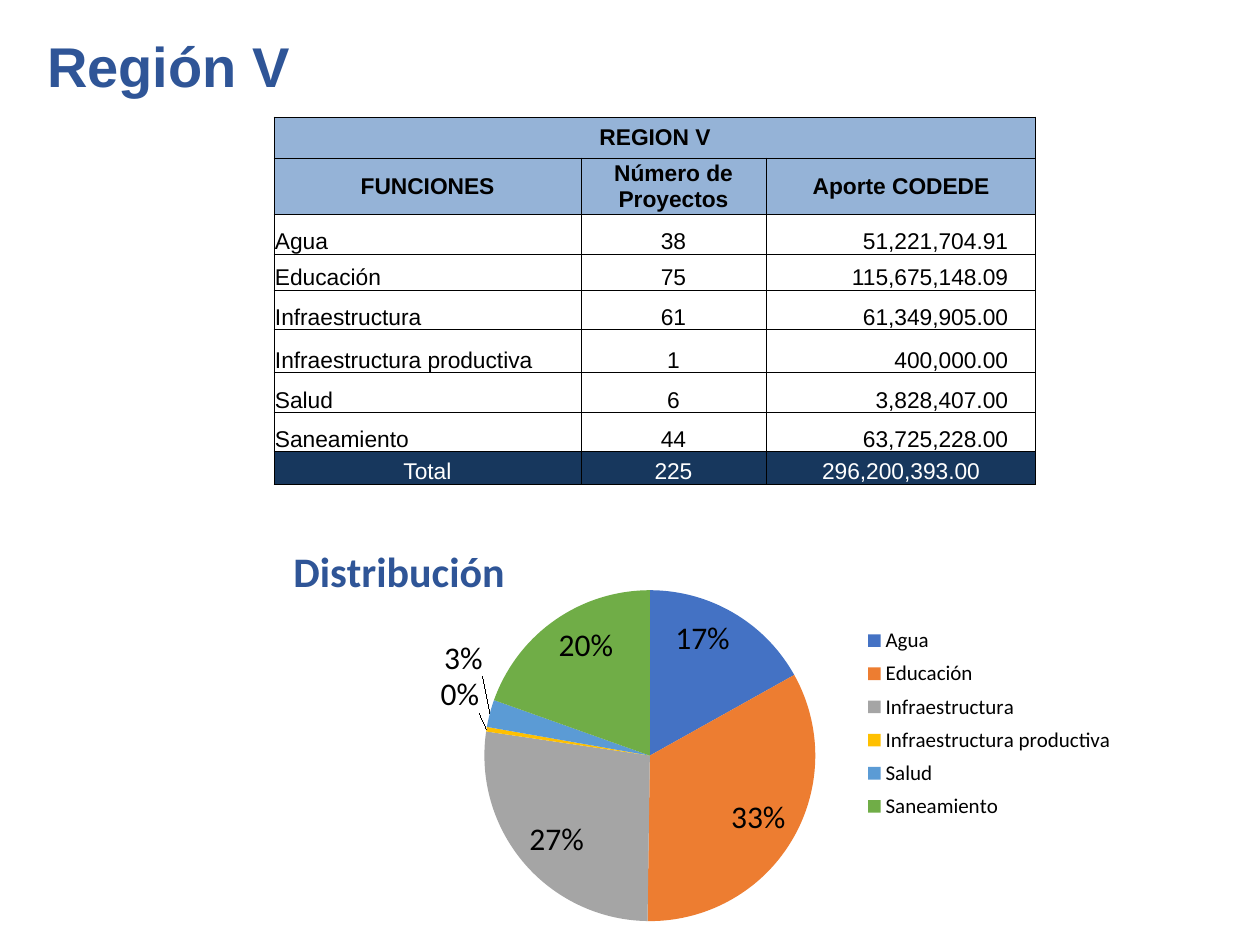
from lxml import etree
from pptx import Presentation
from pptx.chart.data import CategoryChartData
from pptx.dml.color import RGBColor
from pptx.enum.chart import XL_CHART_TYPE as ChartType
from pptx.enum.chart import XL_LABEL_POSITION as LabelPosition
from pptx.enum.chart import XL_LEGEND_POSITION as LegendPosition
from pptx.enum.text import MSO_ANCHOR as Anchor
from pptx.enum.text import PP_ALIGN as Align
from pptx.oxml import parse_xml
from pptx.oxml.ns import nsdecls, qn
from pptx.util import Emu, Pt

COLORS = {
    "blue": "2F5597", "black": "000000", "white": "FFFFFF",
    "header": "95B3D7", "total": "17375D",
}
SLICES = ["4472C4", "ED7D31", "A5A5A5", "FFC000", "5B9BD5", "70AD47"]
ROWS = [
    ("Agua", 38, "51,221,704.91"),
    ("Educación", 75, "115,675,148.09"),
    ("Infraestructura", 61, "61,349,905.00"),
    ("Infraestructura productiva", 1, "400,000.00"),
    ("Salud", 6, "3,828,407.00"),
    ("Saneamiento", 44, "63,725,228.00"),
]
COLUMN_WIDTHS = [307, 185, 270]
ROW_HEIGHTS = [41, 56, 40, 36, 40, 43, 40, 39, 33]


def px(length):
    return Emu(round(length * 914400 / 126))


def style_font(font, size, color, name, bold=False):
    font.size, font.name, font.bold = Pt(size), name, bold
    font.color.rgb = RGBColor.from_string(color)


def add_span(para, text, *style):
    span = para.add_run()
    span.text = text
    style_font(span.font, *style)


def add_title(page, left, top, width, height):
    box = page.shapes.add_textbox(px(left), px(top), px(width), px(height))
    box.text_frame.word_wrap = True
    para = box.text_frame.paragraphs[0]
    para.alignment = Align.CENTER
    add_span(para, "Región V", 32, COLORS["blue"], "Arial", True)


def add_borders(cell):
    properties = cell._tc.get_or_add_tcPr()
    for side in "LRTB":
        properties.append(parse_xml(
            f'<a:ln{side} {nsdecls("a")} w="6350"><a:solidFill>'
            f'<a:srgbClr val="{COLORS["black"]}"/></a:solidFill></a:ln{side}>'))


def fill_cell(cell, text, align, fill=None, color="black", bold=False,
              anchor=Anchor.BOTTOM, right=1):
    add_borders(cell)
    if fill:
        cell.fill.solid()
        cell.fill.fore_color.rgb = RGBColor.from_string(COLORS[fill])
    else:
        cell.fill.background()
    cell.margin_left, cell.margin_right = px(1), px(right)
    cell.margin_top, cell.margin_bottom = px(1), px(0)
    cell.vertical_anchor = anchor
    para = cell.text_frame.paragraphs[0]
    para.alignment = align
    if text:
        add_span(para, text, 13, COLORS[color], "Arial", bold)


def add_project_table(page, left, top):
    frame = page.shapes.add_table(
        len(ROW_HEIGHTS), len(COLUMN_WIDTHS), px(left), px(top),
        px(sum(COLUMN_WIDTHS)), px(sum(ROW_HEIGHTS)))
    table = frame.table
    table.first_row = table.horz_banding = False
    for column, width in zip(table.columns, COLUMN_WIDTHS):
        column.width = px(width)
    for row, height in zip(table.rows, ROW_HEIGHTS):
        row.height = px(height)

    # Two header rows, the first one merged
    headers = [("REGION V", "", ""),
               ("FUNCIONES", "Número de Proyectos", "Aporte CODEDE")]
    for r, texts in enumerate(headers):
        for c, text in enumerate(texts):
            fill_cell(table.cell(r, c), text, Align.CENTER, "header",
                      bold=True, anchor=Anchor.MIDDLE)
    table.cell(0, 0).merge(table.cell(0, 2))

    # One row for each function
    for r, (name, count, amount) in enumerate(ROWS, len(headers)):
        fill_cell(table.cell(r, 0), name, Align.LEFT)
        fill_cell(table.cell(r, 1), str(count), Align.CENTER)
        fill_cell(table.cell(r, 2), amount, Align.RIGHT, right=28)

    # Total row
    total = str(sum(count for _, count, _ in ROWS))
    for c, text in enumerate(["Total", total, "296,200,393.00"]):
        fill_cell(table.cell(len(ROW_HEIGHTS) - 1, c), text, Align.CENTER,
                  "total", "white")


def set_layout(parent, after, **values):
    """Give a chart part a manual layout, placed after the named child."""
    for old in parent.findall(qn("c:layout")):
        parent.remove(old)
    layout = etree.Element(qn("c:layout"))
    manual = etree.SubElement(layout, qn("c:manualLayout"))
    for key, value in values.items():
        etree.SubElement(manual, qn(f"c:{key}"), val=str(value))
    if after:
        parent.find(qn(after)).addnext(layout)
    else:
        parent.insert(0, layout)


def add_distribution_chart(page, left, top, width, height):
    data = CategoryChartData()
    data.categories = [name for name, _, _ in ROWS]
    data.add_series("Distribución", [count for _, count, _ in ROWS])
    chart = page.shapes.add_chart(
        ChartType.PIE, px(left), px(top), px(width), px(height), data).chart
    style_font(chart.font, 18, COLORS["black"], "Calibri")
    edge = {"xMode": "edge", "yMode": "edge"}

    # Title and legend
    chart.has_title = True
    add_span(chart.chart_title.text_frame.paragraphs[0], "Distribución",
             24, COLORS["blue"], "Calibri", True)
    set_layout(chart.chart_title._element, "c:tx", **edge, x=0.01, y=0.18)
    chart.has_legend = True
    legend = chart.legend
    legend.position = LegendPosition.RIGHT
    legend.include_in_layout = False
    style_font(legend.font, 12, COLORS["black"], "Calibri")
    set_layout(legend._element, "c:legendPos", **edge,
               x=0.59, y=0.35, w=0.27, h=0.42)

    # Slices and percentages
    plot = chart.plots[0]
    plot.vary_by_categories = True
    set_layout(plot._element.getparent(), None, layoutTarget="inner", **edge,
               x=0.21, y=0.29, w=0.34, h=0.67)
    series = plot.series[0]
    for i, color in enumerate(SLICES):
        fill = series.points[i].format.fill
        fill.solid()
        fill.fore_color.rgb = RGBColor.from_string(color)
    labels = series.data_labels
    labels.show_value, labels.show_percentage = False, True
    labels.number_format, labels.number_format_is_linked = "0%", False
    labels.position = LabelPosition.INSIDE_END
    style_font(labels.font, 18, COLORS["black"], "Calibri")

    # Thin slices carry their labels outside, moved apart
    for i, shift in {3: -0.03, 4: -0.07}.items():
        label = series.points[i].data_label
        label.position = LabelPosition.OUTSIDE_END
        style_font(label.font, 18, COLORS["black"], "Calibri")
    for element in labels._element.findall(qn("c:dLbl")):
        index = int(element.find(qn("c:idx")).get("val"))
        element.find(qn("c:showVal")).set("val", "0")
        element.find(qn("c:showPercent")).set("val", "1")
        set_layout(element, "c:idx", x=0, y={3: -0.03, 4: -0.07}[index])


def main():
    deck = Presentation()
    deck.slide_width, deck.slide_height = px(1260), px(945)
    page = deck.slides.add_slide(deck.slide_layouts[6])
    add_project_table(page, 274, 117)
    add_title(page, -60, 25, 457, 73)
    add_distribution_chart(page, 276, 447, 984, 494)
    deck.save("out.pptx")


if __name__ == "__main__":
    main()
